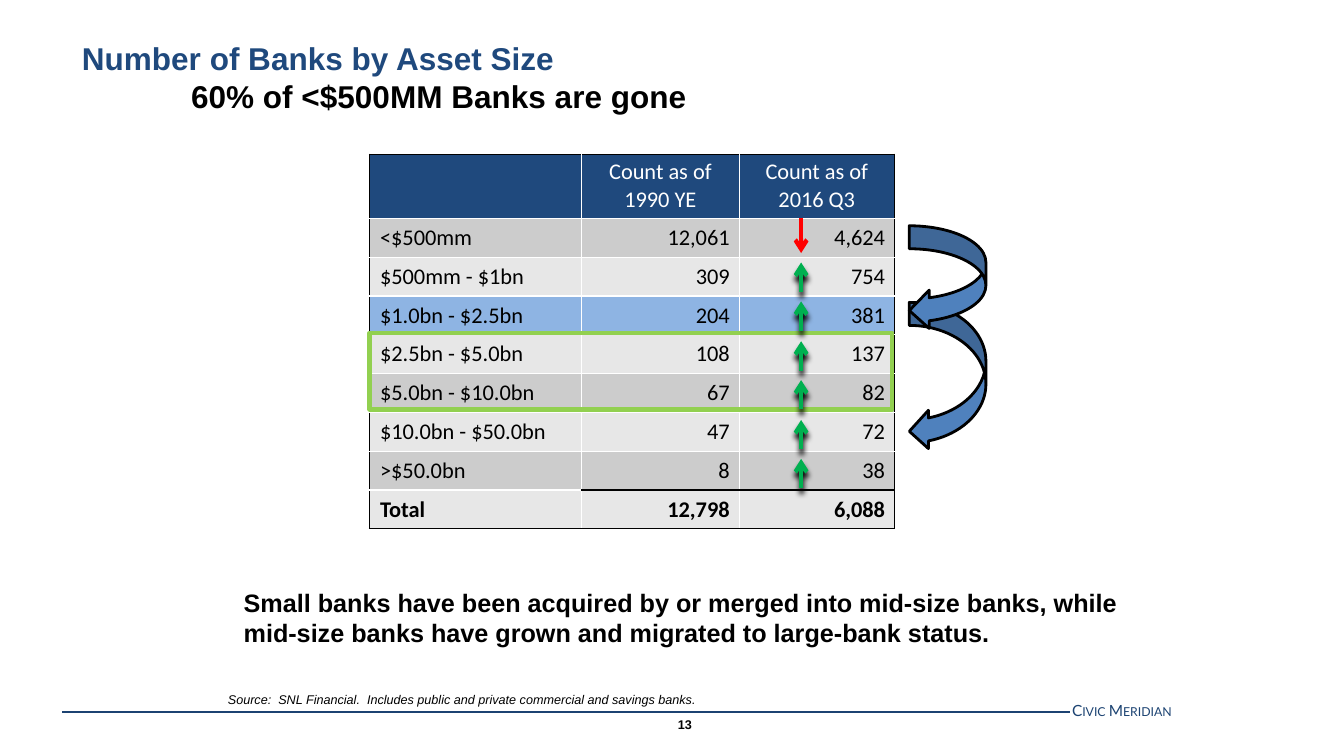
from dataclasses import dataclass

from lxml import etree
from pptx import Presentation
from pptx import util as u
from pptx.dml.color import RGBColor
from pptx.enum import shapes, text
from pptx.oxml import ns

PX = 9525
COLORS = {
    "navy": "1F497D", "footer": "1C4372", "blue": "4F81BD", "sky": "8EB4E3",
    "silver": "CCCCCC", "pale": "E7E7E7", "lime": "92D050", "red": "FF0000",
    "green": "00B050", "black": "000000", "white": "FFFFFF",
}
LEFT, RIGHT, CENTER = text.PP_ALIGN.LEFT, text.PP_ALIGN.RIGHT, text.PP_ALIGN.CENTER
TOP, MIDDLE, BOTTOM = text.MSO_ANCHOR.TOP, text.MSO_ANCHOR.MIDDLE, text.MSO_ANCHOR.BOTTOM


@dataclass(frozen=True)
class Box:
    x: int
    y: int
    w: int
    h: int

    def emu(self) -> tuple[int, ...]:
        return tuple(v * PX for v in (self.x, self.y, self.w, self.h))


@dataclass(frozen=True)
class Line:
    text: str
    color: str = "black"
    indent: int = 0


@dataclass(frozen=True)
class Label:
    box: Box
    lines: tuple[Line, ...]
    size: float
    anchor: text.MSO_ANCHOR = BOTTOM
    align: text.PP_ALIGN = LEFT
    font: str = "Arial"
    bold: bool = True
    italic: bool = False
    small_caps: bool = False
    margins: tuple[int, int] = (10, 5)


@dataclass(frozen=True)
class Row:
    cells: tuple[str, str, str]
    fill: str


@dataclass(frozen=True)
class Rule:
    x1: int
    y1: int
    x2: int
    y2: int
    color: str
    width: int
    arrow: bool = False
    shadow: bool = False


@dataclass(frozen=True)
class Outline:
    kind: shapes.MSO_SHAPE
    box: Box
    line: str
    width: int
    fill: str = ""
    adjust: tuple[float, ...] = ()


LABELS = [
    Label(Box(68, 49, 1152, 48),
          (Line("Number of Banks by Asset Size", "navy"),
           Line("60% of <$500MM Banks are gone", indent=104)), 22.5, MIDDLE),
    Label(Box(222, 551, 866, 71),
          (Line("Small banks have been acquired by or merged into mid-size banks, while "
                "mid-size banks have grown and migrated to large-bank status."),), 18),
    Label(Box(207, 642, 866, 36),
          (Line("Source:  SNL Financial.  Includes public and private commercial "
                "and savings banks."),), 9, bold=False, italic=True),
    Label(Box(609, 678, 60, 24), (Line("13"),), 9, MIDDLE, RIGHT),
    Label(Box(1021, 664, 200, 21), (Line("Civic Meridian", "footer"),), 11, TOP,
          font="Lato", bold=False, small_caps=True, margins=(0, 4)),
]
ROWS = [
    Row(("", "Count as of\n1990 YE", "Count as of\n2016 Q3"), "navy"),
    Row(("<$500mm", "12,061", "4,624"), "silver"),
    Row(("$500mm - $1bn", "309", "754"), "pale"),
    Row(("$1.0bn - $2.5bn", "204", "381"), "sky"),
    Row(("$2.5bn - $5.0bn", "108", "137"), "pale"),
    Row(("$5.0bn - $10.0bn", "67", "82"), "silver"),
    Row(("$10.0bn - $50.0bn", "47", "72"), "pale"),
    Row((">$50.0bn", "8", "38"), "silver"),
    Row(("Total", "12,798", "6,088"), "pale"),
]
COL_WIDTHS = (202, 150, 148)
HEADER_HEIGHT, ROW_HEIGHT = 61, 37
TABLE = Box(352, 147, sum(COL_WIDTHS), HEADER_HEIGHT + ROW_HEIGHT * (len(ROWS) - 1))
TREND_X = 763
FOOTER_RULE = Rule(1019, 678, 59, 678, "footer", 1)
TRENDS = [Rule(TREND_X, 208, TREND_X, 241, "red", 3, arrow=True)] + [
    Rule(TREND_X, y, TREND_X, y - 28, "green", 3, arrow=True, shadow=True)
    for y in (278 + i * 75 // 2 for i in range(6))
]
CURVE = shapes.MSO_SHAPE.CURVED_LEFT_ARROW
LONG_CURVE = Outline(CURVE, Box(866, 288, 73, 141), "black", 2, "blue", (0.3, 0.5, 0.25))
SHORT_CURVE = Outline(CURVE, Box(866, 215, 73, 99), "black", 2, "blue", (0.3, 0.5, 0.26))
HIGHLIGHT = Outline(shapes.MSO_SHAPE.RECTANGLE, Box(352, 317, 498, 73), "lime", 3)


def rgb(name: str) -> RGBColor:
    return RGBColor.from_string(COLORS[name])


def add_xml(parent, tag: str, **attrs: str):
    return etree.SubElement(parent, ns.qn(tag), attrs)


def add_label(s, label: Label) -> None:
    tf = s.shapes.add_textbox(*label.box.emu()).text_frame
    tf.word_wrap = True
    tf.vertical_anchor = label.anchor
    side, top = label.margins
    tf.margin_left = tf.margin_right = side * PX
    tf.margin_top = top * PX
    tf.margin_bottom = (top if side else 0) * PX
    for i, line in enumerate(label.lines):
        p = tf.add_paragraph() if i else tf.paragraphs[0]
        p.alignment = label.align
        if line.indent:
            p._p.get_or_add_pPr().set("marL", str(line.indent * PX))
        r = p.add_run()
        r.text = line.text
        if label.small_caps:
            r._r.get_or_add_rPr().set("cap", "small")
        p.font.name, p.font.size = label.font, u.Pt(label.size)
        p.font.bold, p.font.italic = label.bold, label.italic
        p.font.color.rgb = rgb(line.color)


def add_outline(s, outline: Outline) -> None:
    sp = s.shapes.add_shape(outline.kind, *outline.box.emu())
    sp.shadow.inherit = False
    for i, value in enumerate(outline.adjust):
        sp.adjustments[i] = value
    if outline.fill:
        sp.fill.solid()
        sp.fill.fore_color.rgb = rgb(outline.fill)
    else:
        sp.fill.background()
    sp.line.color.rgb = rgb(outline.line)
    sp.line.width = u.Pt(outline.width)


def add_rule(s, rule: Rule) -> None:
    ends = (v * PX for v in (rule.x1, rule.y1, rule.x2, rule.y2))
    c = s.shapes.add_connector(shapes.MSO_CONNECTOR.STRAIGHT, *ends)
    c.line.color.rgb = rgb(rule.color)
    c.line.width = u.Pt(rule.width)
    props = c.element.spPr
    if rule.arrow:
        add_xml(props.find(ns.qn("a:ln")), "a:tailEnd", type="arrow")
    effects = add_xml(props, "a:effectLst")
    if rule.shadow:
        shadow = add_xml(effects, "a:outerShdw", blurRad="50800", dist="50800",
                         dir="5400000", rotWithShape="0")
        add_xml(shadow, "a:srgbClr", val=COLORS["black"])


def add_borders(cell, row: int, col: int) -> None:
    last = len(ROWS) - 1
    black_sides = {
        "L": col == 0,
        "R": col == len(COL_WIDTHS) - 1,
        "T": row == 0 or (row == last and col > 0),
        "B": row == last or (row == last - 1 and col > 0),
    }
    props = cell._tc.get_or_add_tcPr()
    for side, black in black_sides.items():
        ln = add_xml(props, f"a:ln{side}", w=str(u.Pt(1)))
        fill = add_xml(ln, "a:solidFill")
        add_xml(fill, "a:srgbClr", val=COLORS["black" if black else "white"])


def add_bank_table(s) -> None:
    table = s.shapes.add_table(len(ROWS), len(COL_WIDTHS), *TABLE.emu()).table
    table.first_row = table.horz_banding = False
    for col, width in enumerate(COL_WIDTHS):
        table.columns[col].width = width * PX
    for i, row in enumerate(ROWS):
        table.rows[i].height = (ROW_HEIGHT if i else HEADER_HEIGHT) * PX
        for j, value in enumerate(row.cells):
            cell = table.cell(i, j)
            add_borders(cell, i, j)
            cell.fill.solid()
            cell.fill.fore_color.rgb = rgb(row.fill)
            cell.margin_left = (9 if j else 10) * PX
            cell.margin_right = 9 * PX
            cell.margin_top = cell.margin_bottom = 4 * PX
            cell.vertical_anchor = MIDDLE if i else TOP
            cell.text = value
            for p in cell.text_frame.paragraphs:
                p.alignment = CENTER if i == 0 else RIGHT if j else LEFT
                p.font.name, p.font.size = "Calibri", u.Pt(16)
                p.font.bold = i == len(ROWS) - 1
                p.font.color.rgb = rgb("black" if i else "white")


def main() -> None:
    prs = Presentation()
    prs.slide_width, prs.slide_height = 1280 * PX, 720 * PX
    s = prs.slides.add_slide(prs.slide_layouts[6])
    add_rule(s, FOOTER_RULE)
    add_outline(s, LONG_CURVE)
    add_bank_table(s)
    for label in LABELS:
        add_label(s, label)
    add_outline(s, SHORT_CURVE)
    add_outline(s, HIGHLIGHT)
    for trend in TRENDS:
        add_rule(s, trend)
    prs.save("out.pptx")


if __name__ == "__main__":
    main()
